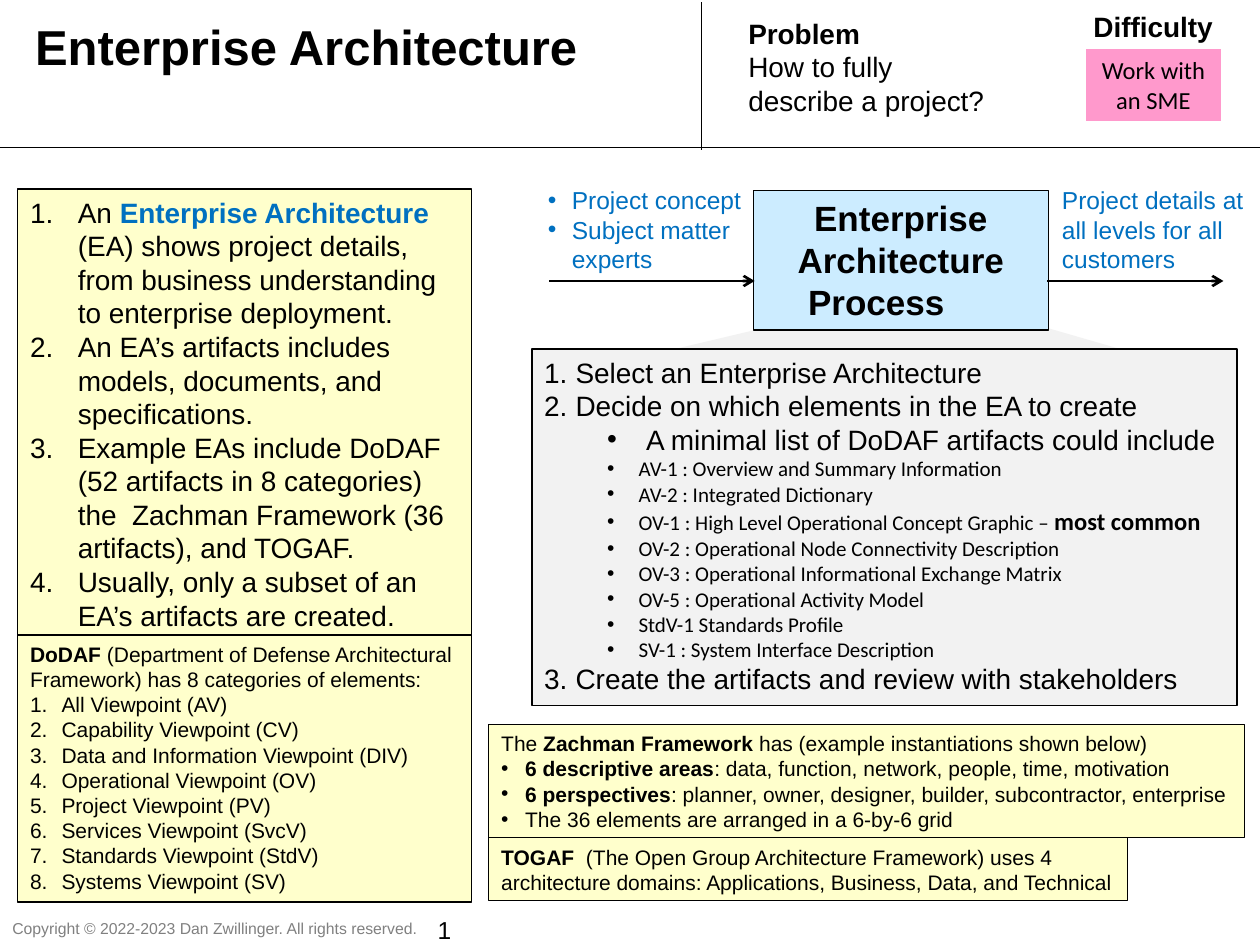
"""Builds the Enterprise Architecture summary slide."""
from dataclasses import dataclass

import lxml.etree
import pptx
import pptx.dml.color
import pptx.enum.shapes
import pptx.enum.text
import pptx.oxml.ns
import pptx.util

Inches = pptx.util.Inches
Pt = pptx.util.Pt
ALIGN = pptx.enum.text.PP_ALIGN
SHAPE = pptx.enum.shapes.MSO_SHAPE


@dataclass(frozen=True)
class Theme:
    """Colours, fonts and type sizes."""
    ink: str = "000000"
    accent: str = "0070C0"
    muted: str = "808080"
    note: str = "FFFFCC"
    process: str = "CCECFF"
    detail: str = "F2F2F2"
    difficulty: str = "FF99CC"
    sans: str = "Arial"
    humanist: str = "Calibri"
    title: float = 28
    heading: float = 20
    body: float = 16
    label: float = 14
    small: float = 12
    footer: float = 9


THEME = Theme()


def run(text, **style):
    """Return one styled run."""
    return text, style


def para(*runs, **style):
    """Return one paragraph; plain strings become unstyled runs."""
    return [r if isinstance(r, tuple) else run(r) for r in runs], style


def listed(items, **style):
    """Return one paragraph with the same style for each item."""
    return [para(item, **style) for item in items]


STEP = dict(mark="number", indent=0.25)
POINT = dict(mark="bullet", indent=0.19)
FACT = dict(mark="number", indent=0.38)
ARTIFACT = dict(mark="bullet", indent=0.25, left=0.75, level=1,
                font=THEME.humanist, size=THEME.small)

ARTIFACTS = [
    "AV-1\u00a0: Overview and Summary Information",
    "AV-2\u00a0: Integrated Dictionary",
    ("OV-1\u00a0: High Level Operational Concept Graphic – ",
     run("most common", bold=True, size=THEME.label)),
    "OV-2\u00a0: Operational Node Connectivity Description",
    "OV-3\u00a0: Operational Informational Exchange Matrix",
    "OV-5\u00a0: Operational Activity Model",
    "StdV-1 Standards Profile",
    "SV-1\u00a0: System Interface Description",
]
STEPS = [
    *listed(["Select an Enterprise Architecture",
             "Decide on which elements in the EA to create"], **STEP),
    para("A minimal list of DoDAF artifacts could include",
         mark="bullet", indent=0.31, left=0.81, level=1),
    *[para(*(a if isinstance(a, tuple) else (a,)), **ARTIFACT) for a in ARTIFACTS],
    para("Create the artifacts and review with stakeholders", **STEP),
]
FACTS = [
    para("An ", run("Enterprise Architecture", bold=True, color=THEME.accent),
         " (EA) shows project details, from business understanding to enterprise deployment.",
         **FACT),
    *listed(["An EA’s artifacts includes models, documents, and specifications.",
             "Example EAs include DoDAF (52 artifacts in 8 categories) the  Zachman "
             "Framework (36 artifacts), and TOGAF.",
             "Usually, only a subset of an EA’s artifacts are created."], **FACT),
]
VIEWPOINTS = ["All Viewpoint (AV)", "Capability Viewpoint (CV)",
              "Data and Information Viewpoint (DIV)", "Operational Viewpoint (OV)",
              "Project Viewpoint (PV)", "Services Viewpoint (SvcV)",
              "Standards Viewpoint (StdV)", "Systems Viewpoint (SV)"]
DODAF = [
    para(run("DoDAF", bold=True),
         " (Department of Defense Architectural Framework) has 8 categories of elements:"),
    *listed(VIEWPOINTS, **STEP),
]
ZACHMAN = [
    para("The ", run("Zachman Framework ", bold=True),
         "has (example instantiations shown below)"),
    para(run("6 descriptive areas", bold=True),
         ": data, function, network, people, time, motivation", **POINT),
    para(run("6 perspectives", bold=True),
         ": planner, owner, designer, builder, subcontractor, enterprise", **POINT),
    para("The 36 elements are arranged in a 6-by-6 grid", **POINT),
]
TOGAF = [para(run("TOGAF  ", bold=True),
              "(The Open Group Architecture Framework) uses 4 architecture domains: "
              "Applications, Business, Data, and Technical")]
PROCESS = [para("Enterprise Architecture", align=ALIGN.CENTER),
           para("Process", align=ALIGN.CENTER, right=0.39)]

LABELS = [
    ((0.18, 0.08, 4.82, 0.57), [para("Enterprise Architecture")],
     dict(size=THEME.title, bold=True), True),
    ((5.84, 0.08, 2.21, 0.91),
     [para("Problem", bold=True), para("How to fully describe a project?")], {}, True),
    ((4.25, 1.42, 1.78, 0.81),
     listed(["Project concept", "Subject matter experts"], **POINT),
     dict(size=THEME.label, color=THEME.accent), True),
    ((8.33, 1.42, 1.7, 0.81), [para("Project details at all levels for all customers")],
     dict(size=THEME.label, color=THEME.accent), True),
    ((0, 7.24, 3.46, 0.25),
     [para("Copyright © 2022-2023 Dan Zwillinger. All rights reserved.")],
     dict(size=THEME.footer, color=THEME.muted), False),
    ((3.13, 7.21, 0.55, 0.27), [para("1", align=ALIGN.RIGHT)],
     dict(size=THEME.label), True),
    ((8.58, 0.03, 1.15, 0.37), [para("Difficulty")], dict(bold=True), False),
]
PANELS = [
    ((4.22, 2.77, 5.6, 2.83), THEME.detail, 1, STEPS, {}),
    ((5.98, 1.51, 2.34, 1.11), THEME.process, 0.75, PROCESS,
     dict(size=THEME.heading, bold=True)),
    ((0.14, 1.5, 3.6, 3.6), THEME.note, 0.75, FACTS, {}),
    ((8.62, 0.39, 1.07, 0.57), THEME.difficulty, 0,
     [para("Work with an SME", align=ALIGN.CENTER)],
     dict(size=THEME.label, font=THEME.humanist)),
    ((0.14, 5.04, 3.6, 2.12), THEME.note, 0.75, DODAF, dict(size=THEME.small)),
    ((3.88, 5.75, 6, 0.9), THEME.note, 0.75, ZACHMAN, dict(size=THEME.small)),
    ((3.88, 6.65, 5.07, 0.5), THEME.note, 0.75, TOGAF, dict(size=THEME.small)),
]
RULES = [((0, 1.17, 10, 1.17), 0.75, False), ((5.57, 1.19, 5.57, 0.02), 0.75, False),
         ((8.31, 2.23, 9.71, 2.23), 1.5, True), ((4.36, 2.23, 5.99, 2.23), 1.5, True)]


def rgb(value):
    """Turn a hex string into a colour."""
    return pptx.dml.color.RGBColor.from_string(value)


def child(parent, tag, **attributes):
    """Append a drawing element."""
    return lxml.etree.SubElement(parent, pptx.oxml.ns.qn(tag), attributes)


def write(frame, paragraphs, base, wrap=True):
    """Fill a text frame run by run."""
    frame.word_wrap = wrap
    frame.auto_size = pptx.enum.text.MSO_AUTO_SIZE.SHAPE_TO_FIT_TEXT
    frame.vertical_anchor = pptx.enum.text.MSO_ANCHOR.TOP
    for index, (runs, style) in enumerate(paragraphs):
        paragraph = frame.add_paragraph() if index else frame.paragraphs[0]
        paragraph.alignment = style.get("align", ALIGN.LEFT)
        paragraph.level = style.get("level", 0)
        properties = paragraph._p.get_or_add_pPr()
        if "right" in style:
            properties.set("marR", str(Inches(style["right"])))
        if "mark" in style:
            properties.set("marL", str(Inches(style.get("left", style["indent"]))))
            properties.set("indent", str(-Inches(style["indent"])))
            child(properties, "a:buFont", typeface=THEME.sans)
            if style["mark"] == "bullet":
                child(properties, "a:buChar", char="•")
            else:
                child(properties, "a:buAutoNum", type="arabicPeriod")
        for text, own in runs:
            look = {**base, **style, **own}
            piece = paragraph.add_run()
            piece.text = text
            piece.font.name = look.get("font", THEME.sans)
            piece.font.size = Pt(look.get("size", THEME.body))
            piece.font.bold = look.get("bold", False)
            piece.font.color.rgb = rgb(look.get("color", THEME.ink))


def add_panel(slide, kind, box, fill, weight):
    """Add a filled shape, outlined when it has a line weight."""
    panel = slide.shapes.add_shape(kind, *map(Inches, box))
    panel.shadow.inherit = False
    panel.fill.solid()
    panel.fill.fore_color.rgb = rgb(fill)
    if weight:
        panel.line.color.rgb = rgb(THEME.ink)
        panel.line.width = Pt(weight)
    else:
        panel.line.fill.background()
    return panel


def add_rule(slide, ends, weight, arrow):
    """Add a straight line with an optional arrowhead."""
    rule = slide.shapes.add_connector(
        pptx.enum.shapes.MSO_CONNECTOR.STRAIGHT, *map(Inches, ends))
    rule.line.color.rgb = rgb(THEME.ink)
    rule.line.width = Pt(weight)
    if arrow:
        child(rule.line._get_or_add_ln(), "a:tailEnd", type="arrow")
    child(rule._element.spPr, "a:effectLst")


def main():
    """Build and save the slide."""
    deck = pptx.Presentation()
    deck.slide_width, deck.slide_height = Inches(10), Inches(7.5)
    slide = deck.slides.add_slide(deck.slide_layouts[6])
    callout = add_panel(slide, SHAPE.ISOSCELES_TRIANGLE, (4.22, 2.31, 5.6, 0.73),
                        THEME.detail, 0)
    callout.adjustments[0] = 0.55
    for box, fill, weight, paragraphs, base in PANELS:
        panel = add_panel(slide, SHAPE.RECTANGLE, box, fill, weight)
        write(panel.text_frame, paragraphs, base)
    for rule in RULES:
        add_rule(slide, *rule)
    for box, paragraphs, base, wrap in LABELS:
        label = slide.shapes.add_textbox(*map(Inches, box))
        write(label.text_frame, paragraphs, base, wrap)
    deck.save("out.pptx")


if __name__ == "__main__":
    main()
